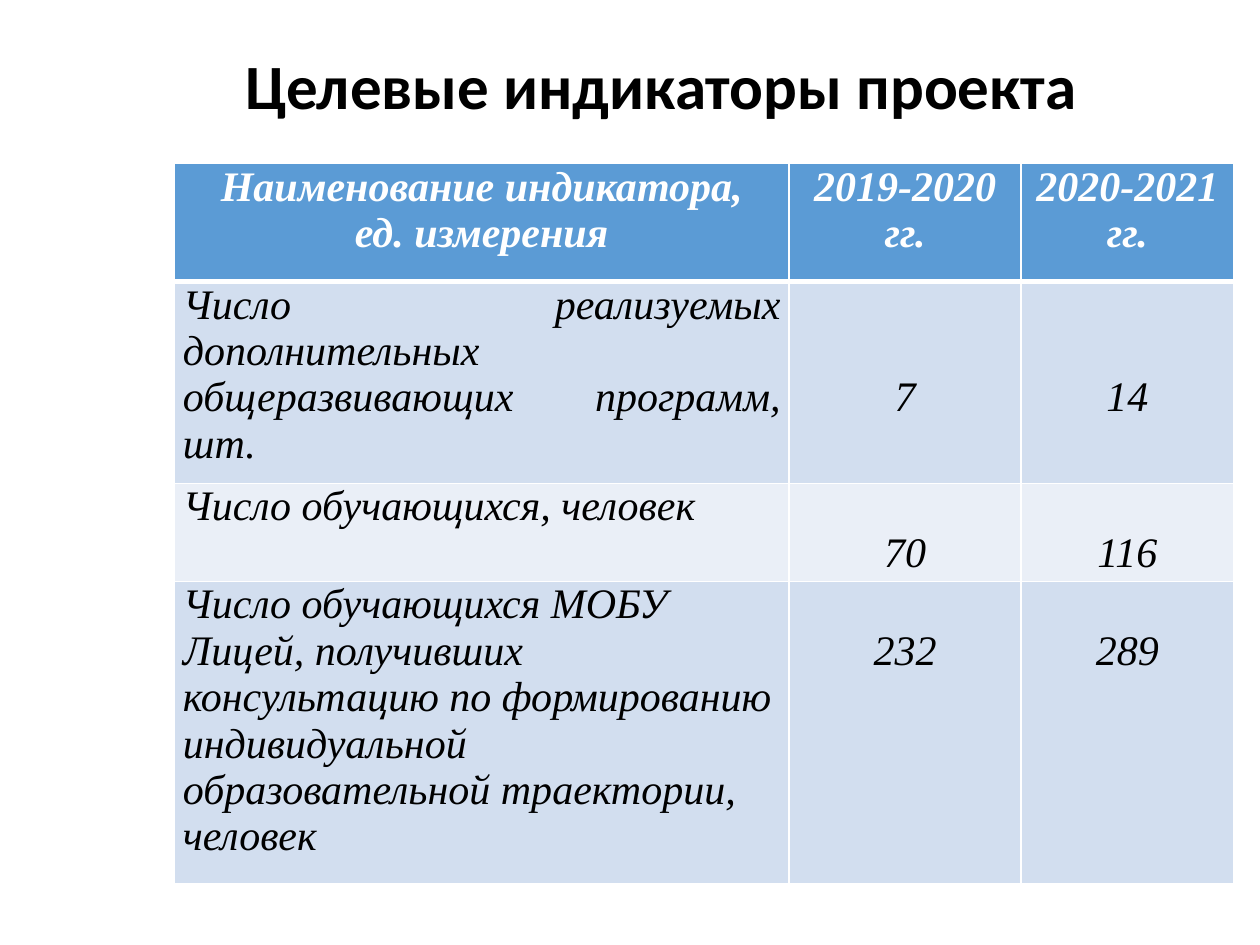
from lxml.etree import SubElement
from pptx import Presentation
from pptx.dml.color import RGBColor
from pptx.enum.text import MSO_ANCHOR, PP_ALIGN
from pptx.oxml.ns import qn
from pptx.util import Pt

# Content
TITLE = "Целевые индикаторы проекта"
HEADER = (
    "Наименование индикатора,\nед. измерения",
    "2019-2020 гг.",
    "2020-2021 гг.",
)
# Indicator, its alignment, lines the values are lowered by, values
INDICATORS = [
    ("Число реализуемых дополнительных общеразвивающих программ, шт.",
     PP_ALIGN.JUSTIFY, 2, ("7", "14")),
    ("Число обучающихся, человек", PP_ALIGN.JUSTIFY, 1, ("70", "116")),
    ("Число обучающихся МОБУ Лицей, получивших консультацию по формированию "
     "индивидуальной образовательной траектории, человек",
     PP_ALIGN.LEFT, 1, ("232", "289")),
]

# Format
COLORS = {"header": "5B9BD5", "odd": "D2DEEF", "even": "EAEFF7",
          "text": "000000", "white": "FFFFFF"}
TITLE_FONT = {"name": "Calibri", "size": Pt(36), "bold": True}
HEADER_FONT = {"name": "Times New Roman", "size": Pt(24), "bold": True, "italic": True}
BODY_FONT = {**HEADER_FONT, "bold": False}
COLUMN_WIDTHS = (351.5, 132.5, 121.5)
ROW_HEIGHTS = (67.5, 112.5, 56, 168.5)
TABLE_LEFT, TABLE_TOP = 99.5, 93.5
LINE_HEIGHT = 26.5
SIDE_MARGIN = 5


def write(frame, text, align, font, color):
    frame.text = text
    for paragraph in frame.paragraphs:
        paragraph.alignment = align
        for name, value in font.items():
            setattr(paragraph.font, name, value)
        paragraph.font.color.rgb = RGBColor.from_string(COLORS[color])


def add_borders(cell, top, bottom):
    properties = cell._tc.get_or_add_tcPr()
    for side, width in (("L", 1), ("R", 1), ("T", top), ("B", bottom)):
        line = SubElement(properties, qn(f"a:ln{side}"), w=str(Pt(width)))
        fill = SubElement(line, qn("a:solidFill"))
        SubElement(fill, qn("a:srgbClr"), val=COLORS["white"])


def fill_cell(cell, row, text, align, font, color, lowered=0):
    add_borders(cell, top=3 if row == 1 else 1, bottom=3 if row == 0 else 1)
    band = "header" if row == 0 else "odd" if row % 2 else "even"
    cell.fill.solid()
    cell.fill.fore_color.rgb = RGBColor.from_string(COLORS[band])
    margins = {"margin_left": SIDE_MARGIN, "margin_right": SIDE_MARGIN,
               "margin_top": lowered * LINE_HEIGHT, "margin_bottom": 0}
    for name, value in margins.items():
        setattr(cell, name, Pt(value))
    write(cell.text_frame, text, align, font, color)


def main():
    deck = Presentation()
    deck.slide_width, deck.slide_height = Pt(720), Pt(540)
    slide = deck.slides.add_slide(deck.slide_layouts[6])

    # Title
    title = slide.shapes.add_textbox(Pt(85), Pt(20), Pt(585.5), Pt(62)).text_frame
    title.word_wrap = True
    title.vertical_anchor = MSO_ANCHOR.MIDDLE
    write(title, TITLE, PP_ALIGN.CENTER, TITLE_FONT, "text")
    title.paragraphs[0].line_spacing = 0.9

    # Table grid
    table = slide.shapes.add_table(
        len(ROW_HEIGHTS), len(COLUMN_WIDTHS), Pt(TABLE_LEFT), Pt(TABLE_TOP),
        Pt(sum(COLUMN_WIDTHS)), Pt(sum(ROW_HEIGHTS))).table
    for column, width in zip(table.columns, COLUMN_WIDTHS):
        column.width = Pt(width)
    for row, height in zip(table.rows, ROW_HEIGHTS):
        row.height = Pt(height)

    # Header row
    for column, heading in enumerate(HEADER):
        fill_cell(table.cell(0, column), 0, heading, PP_ALIGN.CENTER,
                  HEADER_FONT, "white")

    # Indicator rows
    for row, (indicator, align, lowered, values) in enumerate(INDICATORS, 1):
        fill_cell(table.cell(row, 0), row, indicator, align, BODY_FONT, "text")
        for column, value in enumerate(values, 1):
            fill_cell(table.cell(row, column), row, value, PP_ALIGN.CENTER,
                      BODY_FONT, "text", lowered)

    deck.save("out.pptx")


if __name__ == "__main__":
    main()
